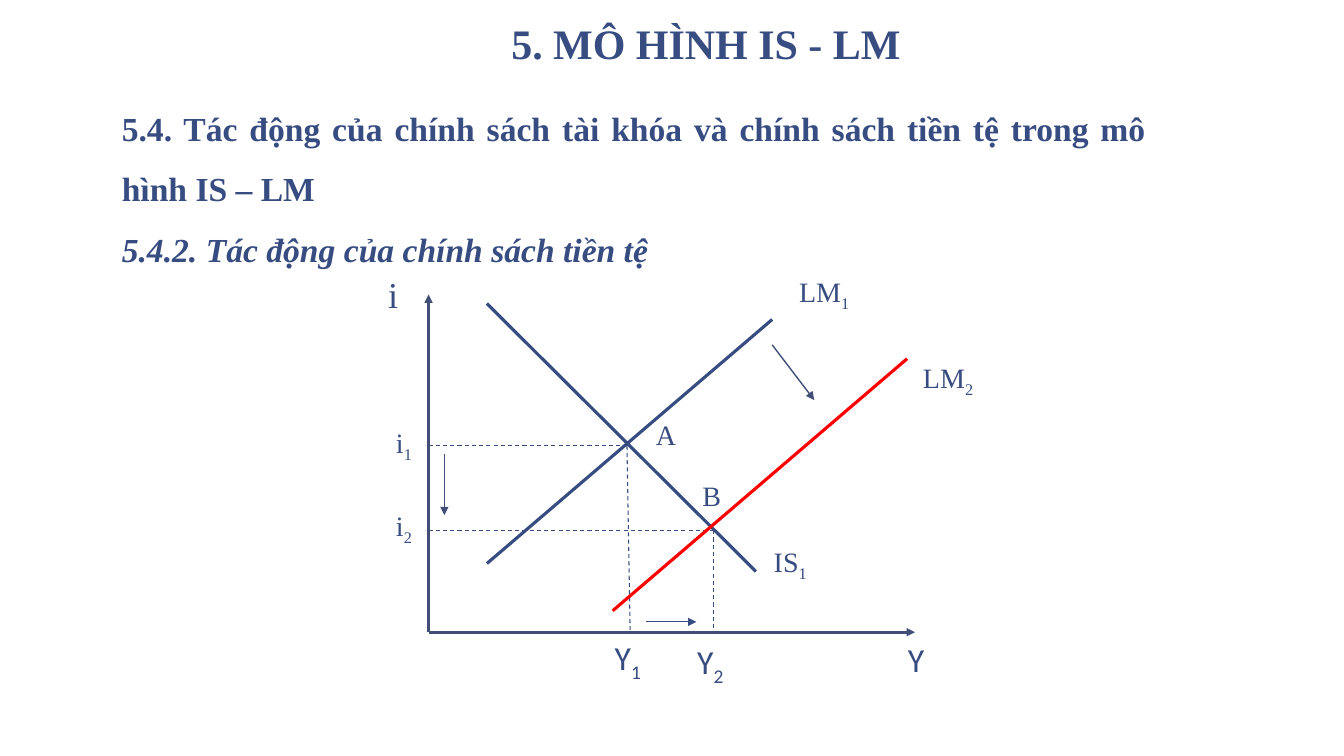
from dataclasses import dataclass

import pptx
import pptx.dml.color
import pptx.enum.dml
import pptx.enum.shapes
import pptx.enum.text
import pptx.oxml.ns
import pptx.oxml.xmlchemy
import pptx.util
from lxml import etree

Cm = pptx.util.Cm
Pt = pptx.util.Pt
Color = pptx.dml.color.RGBColor
Align = pptx.enum.text.PP_ALIGN
Anchor = pptx.enum.text.MSO_ANCHOR
qn = pptx.oxml.ns.qn

BLUE = Color(0x37, 0x4C, 0x81)
SLATE = Color(0x41, 0x4E, 0x77)
RED = Color(0xFF, 0x00, 0x00)
SERIF = "Times New Roman"
SANS = "Calibri"

# Key positions of the graph, in centimetres
AXIS_X, AXIS_Y = 10.8, 15.93
RATE_A, RATE_B = 11.23, 13.36
OUT_A, OUT_B = 15.88, 17.98


@dataclass
class Line:
    x1: float
    y1: float
    x2: float
    y2: float
    color: Color = BLUE
    width: float = 2.25
    dash: bool = False
    arrow: bool = False


@dataclass
class Label:
    text: str
    sub: str
    x: float
    y: float
    width: float
    size: int = 20
    font: str = SERIF


LINES = [
    Line(12.27, 14.2, 19.46, 8.05),  # LM1
    Line(AXIS_X, RATE_A, OUT_A, RATE_A, width=0.75, dash=True),
    Line(AXIS_X, RATE_B, OUT_B, RATE_B, width=0.75, dash=True),
    Line(OUT_B, RATE_B, OUT_B, 15.98, width=0.75, dash=True),
    Line(15.8, RATE_A, OUT_A, 15.88, width=0.75, dash=True),
    Line(12.27, 7.65, 19.05, 14.4),  # IS1
    Line(16.28, 15.67, 17.55, 15.67, width=0.75, arrow=True),
    Line(AXIS_X, AXIS_Y, AXIS_X, 7.42, SLATE, 2, arrow=True),
    Line(AXIS_X, AXIS_Y, 23.06, AXIS_Y, SLATE, 2, arrow=True),
    Line(15.44, 15.39, 22.86, 9.04, RED),  # LM2
    Line(11.2, 11.43, 11.2, 12.98, SLATE, 1, arrow=True),
    Line(19.46, 8.69, 20.52, 10.08, SLATE, 1, arrow=True),
]

LABELS = [
    Label("i", "", 9.53, 6.73, 1.07, 26),
    Label("IS", "1", 19.25, 13.59, 2.11),
    Label("LM", "1", 19.89, 6.78, 2.11),
    Label("LM", "2", 23.01, 8.97, 2.11),
    Label("A", "", 16.28, 10.39, 1.27),
    Label("B", "", 17.45, 11.94, 1.27),
    Label("i", "1", 9.73, 10.59, 1.47),
    Label("i", "2", 9.73, 12.7, 1.47),
    Label("Y", "1", 15.24, 15.93, 1.7, 24, SANS),
    Label("Y", "2", 17.32, 16.03, 1.7, 24, SANS),
    Label("Y", "", 22.63, 15.98, 1.27, 24, SANS),
]


def add_box(slide, x: float, y: float, w: float, h: float):
    """Add a wrapping text box and return its text frame."""
    frame = slide.shapes.add_textbox(Cm(x), Cm(y), Cm(w), Cm(h)).text_frame
    frame.word_wrap = True
    return frame


def pad(frame) -> None:
    """Give the frame the wide margins of the headings."""
    frame.margin_left = frame.margin_right = Cm(0.33)
    frame.margin_top = frame.margin_bottom = Cm(0.18)


def add_run(para, text: str, size: int, font: str = SERIF,
            bold: bool = False, slant: bool = False):
    run = para.add_run()
    run.text = text
    run.font.name = font
    run.font.size = Pt(size)
    run.font.bold = bold
    run.font.italic = slant
    run.font.color.rgb = BLUE
    return run


def draw_line(slide, line: Line) -> None:
    shape = slide.shapes.add_connector(
        pptx.enum.shapes.MSO_CONNECTOR.STRAIGHT,
        Cm(line.x1), Cm(line.y1), Cm(line.x2), Cm(line.y2))
    shape.line.color.rgb = line.color
    shape.line.width = Pt(line.width)
    if line.dash:
        shape.line.dash_style = pptx.enum.dml.MSO_LINE.DASH
    props = shape._element.spPr
    if line.arrow:
        etree.SubElement(props.find(qn("a:ln")), qn("a:tailEnd"), type="triangle")
    etree.SubElement(props, qn("a:effectLst"))


def draw_label(slide, label: Label) -> None:
    height = label.size * 0.053
    frame = add_box(slide, label.x, label.y, label.width, height)
    para = frame.paragraphs[0]
    add_run(para, label.text, label.size, label.font)
    if label.sub:
        run = add_run(para, label.sub, label.size, label.font)
        run.font._element.set("baseline", "-25000")


def draw_title(slide) -> None:
    frame = add_box(slide, 3.15, -0.18, 29.29, 2.08)
    pad(frame)
    frame.vertical_anchor = Anchor.BOTTOM
    para = frame.paragraphs[0]
    para.alignment = Align.CENTER
    para.line_spacing = 0.85
    add_run(para, "5. MÔ HÌNH IS - LM", 30, bold=True)


def draw_body(slide) -> None:
    frame = add_box(slide, 2.74, 2.03, 26.47, 13.72)
    pad(frame)
    head = frame.paragraphs[0]
    add_run(head, "5.4. Tác động của chính sách tài khóa và chính sách "
            "tiền tệ trong mô hình IS – LM", 24, bold=True)
    sub = frame.add_paragraph()
    add_run(sub, "5.4.2. Tác động của chính sách tiền tệ", 24,
            bold=True, slant=True)
    for para in (head, sub):
        para.alignment = Align.JUSTIFY
        para.line_spacing = 1.5


def main() -> None:
    deck = pptx.Presentation()
    deck.slide_width, deck.slide_height = Cm(33.87), Cm(19.05)
    slide = deck.slides.add_slide(deck.slide_layouts[6])
    draw_title(slide)
    draw_body(slide)
    for line in LINES:
        draw_line(slide, line)
    for label in LABELS:
        draw_label(slide, label)
    deck.save("out.pptx")


if __name__ == "__main__":
    main()
